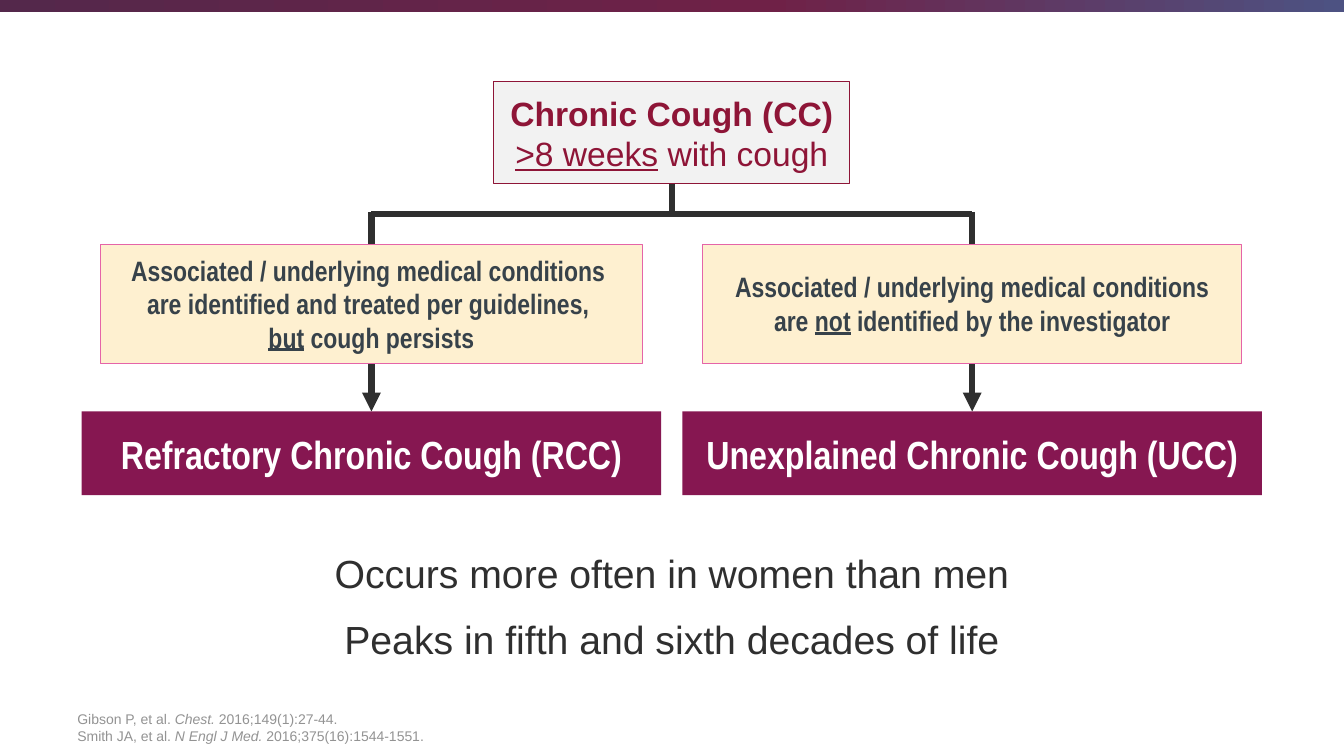
from copy import deepcopy

from lxml import etree
from pptx import Presentation
from pptx.dml.color import RGBColor
from pptx.enum.shapes import MSO_CONNECTOR, MSO_SHAPE
from pptx.enum.text import MSO_ANCHOR, MSO_AUTO_SIZE, PP_ALIGN
from pptx.oxml.ns import qn
from pptx.util import Cm, Pt

RECTANGLE = MSO_SHAPE.RECTANGLE
STRAIGHT = MSO_CONNECTOR.STRAIGHT
TOP, MIDDLE, BOTTOM = MSO_ANCHOR.TOP, MSO_ANCHOR.MIDDLE, MSO_ANCHOR.BOTTOM
LEFT, CENTER = PP_ALIGN.LEFT, PP_ALIGN.CENTER
NO_AUTOFIT = MSO_AUTO_SIZE.NONE

BAND_STOPS = [
    (0, RGBColor(0x54, 0x28, 0x4B)),
    (0.57, RGBColor(0x6F, 0x21, 0x47)),
    (1, RGBColor(0x4D, 0x52, 0x82)),
]
INK = RGBColor(0x2F, 0x2F, 0x2F)
CRIMSON = RGBColor(0x8E, 0x15, 0x37)
PALE_GREY = RGBColor(0xF2, 0xF2, 0xF2)
CREAM = RGBColor(0xFE, 0xF0, 0xD0)
PINK = RGBColor(0xE5, 0x64, 0xA8)
SLATE = RGBColor(0x37, 0x42, 0x4A)
PLUM = RGBColor(0x86, 0x17, 0x51)
WHITE = RGBColor(0xFF, 0xFF, 0xFF)
GREY = RGBColor(0x93, 0x93, 0x93)

SLIDE_WIDTH, SLIDE_HEIGHT = 33.87, 19.05
TREE_CENTER = 16.93
BRANCH_OFFSET = 7.57
BRANCH_Y = 5.39
DIAGNOSIS_TOP = 10.37

# Each line is a list of (text, style) runs; style is "", "underline" or "italic".
ROOT = [[("Chronic Cough (CC)", "")],
        [(">8 weeks", "underline"), (" with cough", "")]]
BRANCHES = [
    (-1, 13.67,
     [[("Associated / underlying medical conditions ", "")],
      [("are identified and treated per guidelines, ", "")],
      [("but", "underline"), (" cough persists", "")]],
     [[("Refractory Chronic Cough (RCC)", "")]]),
    (1, 13.59,
     [[("Associated / underlying medical conditions", "")],
      [("are ", ""), ("not", "underline"), (" identified by the investigator", "")]],
     [[("Unexplained Chronic Cough (UCC)", "")]]),
]
FACTS = [[("Occurs more often in women than men", "")],
         [("Peaks in fifth and sixth decades of life", "")]]
REFERENCES = [
    [("Gibson P, et al. ", ""), ("Chest. ", "italic"), ("2016;149(1):27-44.", "")],
    [("Smith JA, et al. ", ""), ("N Engl J Med. ", "italic"),
     ("2016;375(16):1544-1551.", "")],
]


def write_lines(frame, lines, font_name, size, color, bold=False, align=CENTER,
                anchor=MIDDLE, wrap=False, side_margin=0.25):
    frame.auto_size = NO_AUTOFIT
    frame.word_wrap = wrap
    frame.vertical_anchor = anchor
    frame.margin_left = frame.margin_right = Cm(side_margin)
    frame.margin_top = frame.margin_bottom = Cm(0.13)
    for index, line in enumerate(lines):
        paragraph = frame.add_paragraph() if index else frame.paragraphs[0]
        paragraph.alignment = align
        paragraph.space_before = Pt(0)
        paragraph.font.name = font_name
        paragraph.font.size = Pt(size)
        paragraph.font.color.rgb = color
        paragraph.font.bold = bold
        for text, style in line:
            run = paragraph.add_run()
            run.text = text
            if style == "underline":
                run.font.underline = True
            elif style == "italic":
                run.font.italic = True


def place(shape, left, top, width, height):
    shape.left, shape.top = Cm(left), Cm(top)
    shape.width, shape.height = Cm(width), Cm(height)


def paint(shape, fill, outline=None):
    shape.fill.solid()
    shape.fill.fore_color.rgb = fill
    if outline is None:
        shape.line.fill.background()
    else:
        shape.line.color.rgb = outline
        shape.line.width = Pt(0.75)


def add_box(slide, center, top, width, height, fill, outline=None):
    box = slide.shapes.add_shape(RECTANGLE, Cm(center - width / 2), Cm(top),
                                 Cm(width), Cm(height))
    box.shadow.inherit = False
    paint(box, fill, outline)
    return box


def add_branch_line(slide, x1, y1, x2, y2, arrow=False):
    connector = slide.shapes.add_connector(STRAIGHT, Cm(x1), Cm(y1), Cm(x2), Cm(y2))
    connector.line.color.rgb = INK
    connector.line.width = Pt(4.5)
    properties = connector._element.spPr
    if arrow:
        etree.SubElement(properties.find(qn("a:ln")), qn("a:tailEnd"), type="triangle")
    etree.SubElement(properties, qn("a:effectLst"))


def add_top_band(slide):
    band = add_box(slide, SLIDE_WIDTH / 2, 0, SLIDE_WIDTH, 0.3, WHITE)
    band.fill.gradient()
    band.fill.gradient_angle = 0
    stop_list = band._element.spPr.find(".//" + qn("a:gsLst"))
    stop_list.append(deepcopy(stop_list[-1]))
    for stop, (position, color) in zip(band.fill.gradient_stops, BAND_STOPS):
        stop.position = position
        stop.color.rgb = color


def add_root(slide):
    root = slide.shapes.title
    place(root, TREE_CENTER - 4.49, 2.06, 8.98, 2.57)
    paint(root, PALE_GREY, CRIMSON)
    write_lines(root.text_frame, ROOT, "Arial", 24, CRIMSON)
    root.text_frame.paragraphs[0].font.bold = True


def add_branch(slide, side, width, condition, diagnosis):
    center = TREE_CENTER + side * BRANCH_OFFSET
    add_branch_line(slide, center, BRANCH_Y - 0.05, center, DIAGNOSIS_TOP, arrow=True)
    condition_box = add_box(slide, center, 6.15, width, 3.0, CREAM, PINK)
    write_lines(condition_box.text_frame, condition, "Arial Narrow", 20, SLATE, bold=True)
    diagnosis_box = add_box(slide, center, DIAGNOSIS_TOP, 14.6, 2.11, PLUM)
    write_lines(diagnosis_box.text_frame, diagnosis, "Arial Narrow", 28, WHITE, bold=True)


def add_facts(slide):
    facts = slide.placeholders[1]
    place(facts, TREE_CENTER - 9, 13.72, 18, 3.86)
    write_lines(facts.text_frame, FACTS, "Arial", 28, INK, anchor=TOP, side_margin=0.13)
    for paragraph in facts.text_frame.paragraphs:
        properties = paragraph._p.get_or_add_pPr()
        properties.set("marL", "0")
        properties.set("indent", "0")
        bullet_off = etree.Element(qn("a:buNone"))
        properties.find(qn("a:defRPr")).addprevious(bullet_off)
    facts.text_frame.paragraphs[1].space_before = Pt(13)


def add_references(slide):
    references = slide.shapes.add_textbox(Cm(1.7), Cm(17.67), Cm(29.85), Cm(1.22))
    write_lines(references.text_frame, REFERENCES, "Arial", 10, GREY,
                align=LEFT, anchor=BOTTOM, wrap=True)


def main():
    presentation = Presentation()
    presentation.slide_width = Cm(SLIDE_WIDTH)
    presentation.slide_height = Cm(SLIDE_HEIGHT)
    slide = presentation.slides.add_slide(presentation.slide_layouts[1])
    add_top_band(slide)
    add_root(slide)
    add_branch_line(slide, TREE_CENTER, 4.63, TREE_CENTER, BRANCH_Y)
    add_branch_line(slide, TREE_CENTER - BRANCH_OFFSET, BRANCH_Y,
                    TREE_CENTER + BRANCH_OFFSET, BRANCH_Y)
    for branch in BRANCHES:
        add_branch(slide, *branch)
    add_facts(slide)
    add_references(slide)
    presentation.save("out.pptx")


if __name__ == "__main__":
    main()
